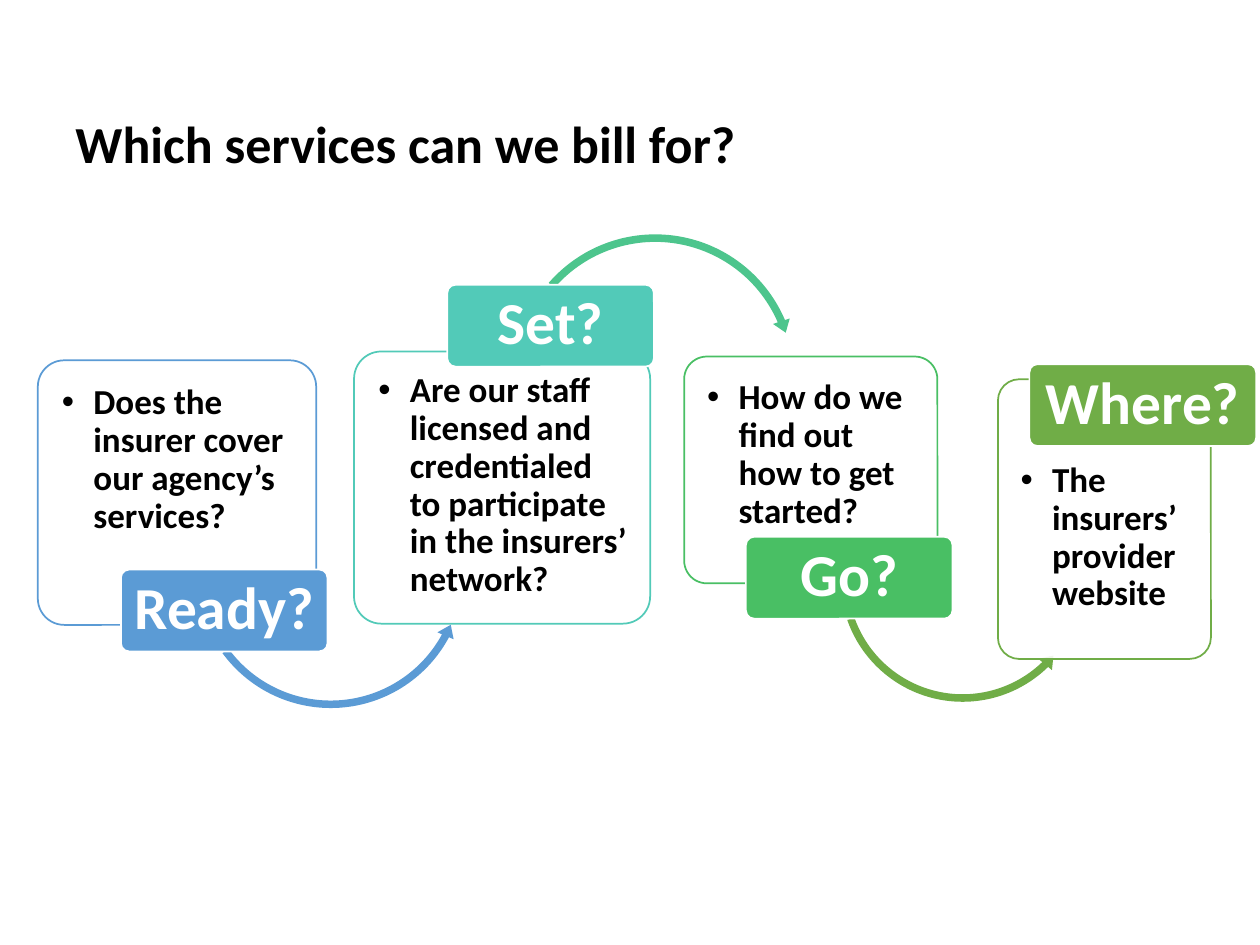
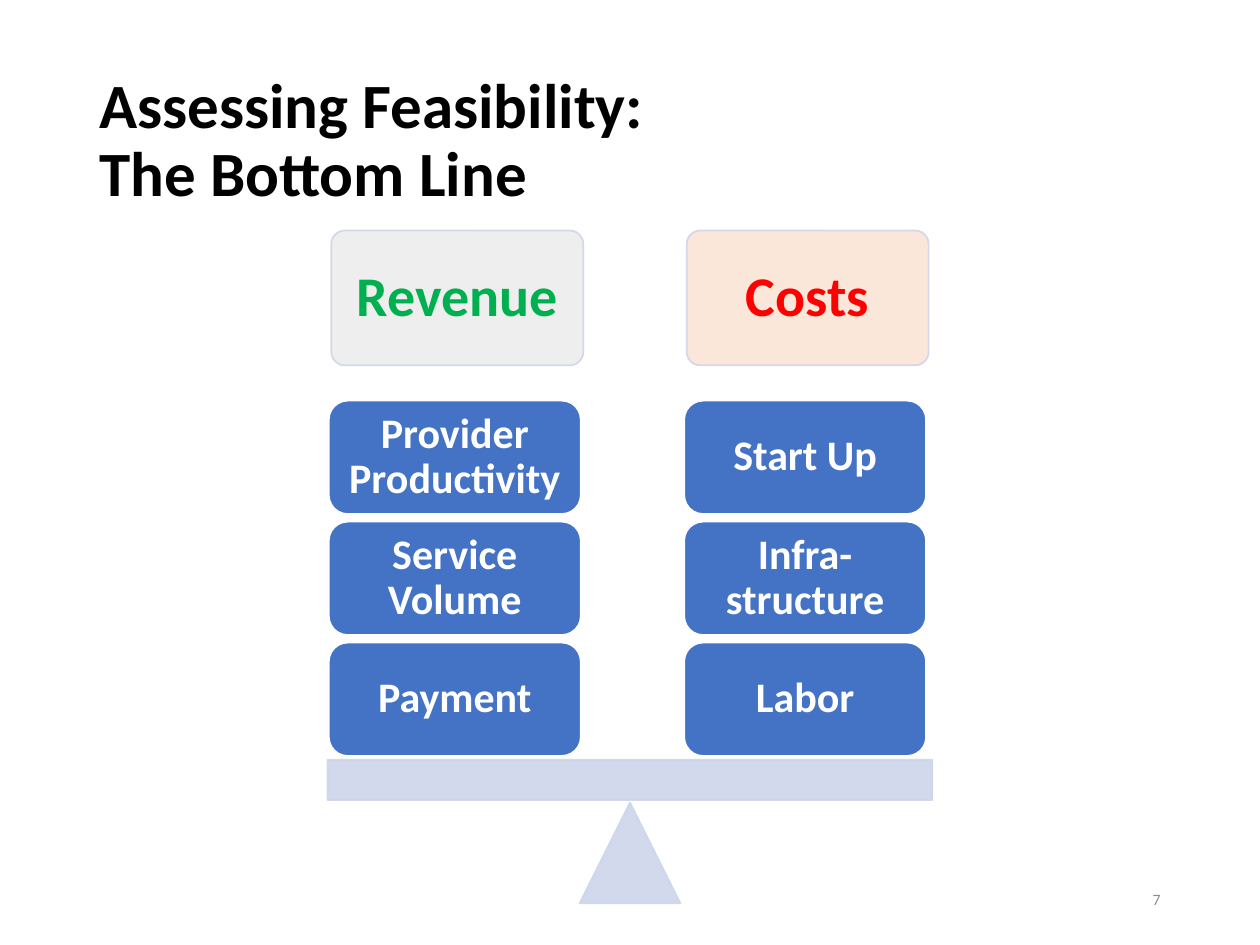
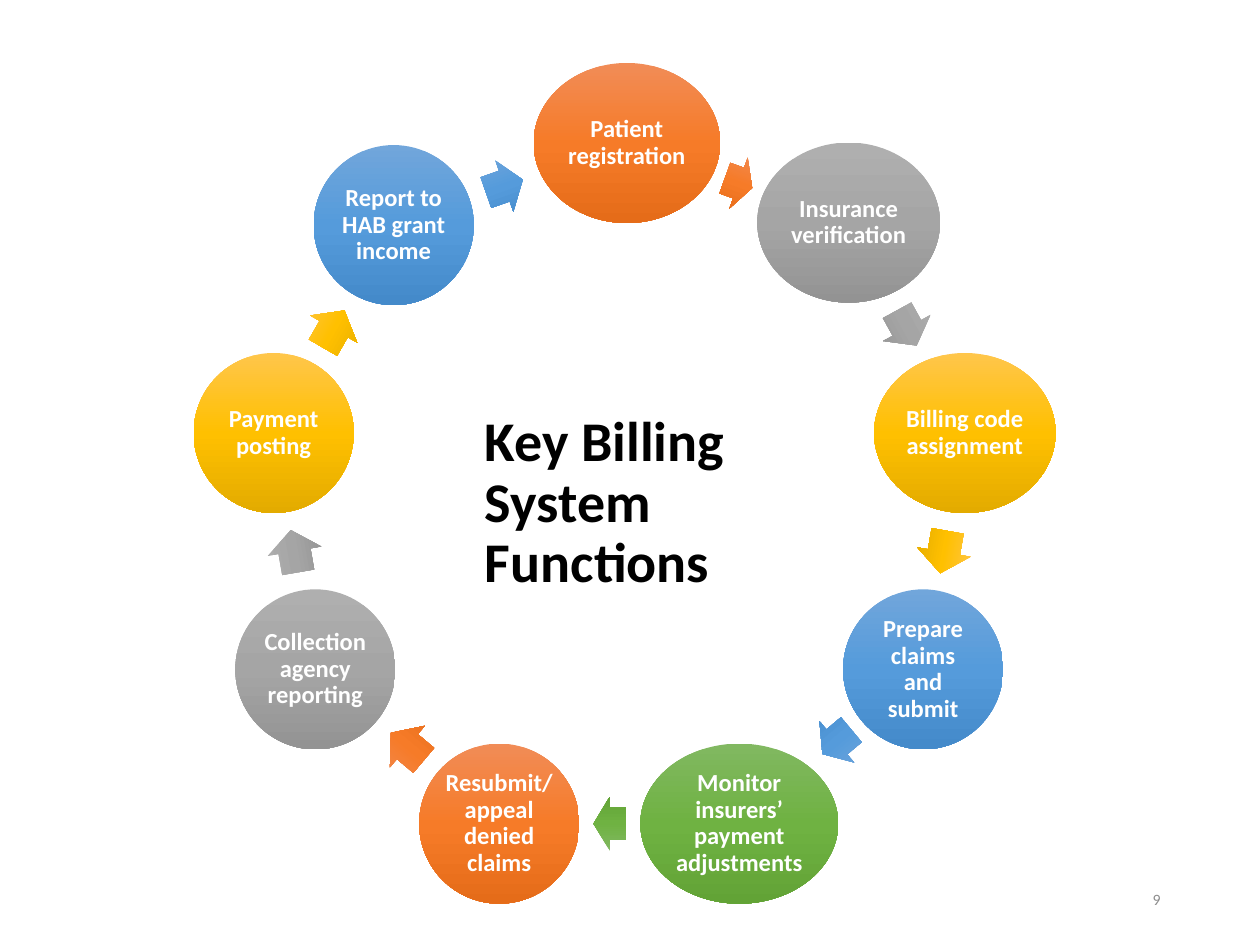
from copy import deepcopy
from math import atan2, cos, degrees, radians, sin

from lxml.etree import SubElement
from pptx import Presentation
from pptx.dml.color import RGBColor
from pptx.enum.shapes import MSO_SHAPE as SHAPE
from pptx.enum.text import MSO_ANCHOR as ANCHOR, PP_ALIGN as ALIGN
from pptx.oxml.ns import qn
from pptx.util import Inches, Pt

FONT = "Calibri"
COLORS = {
    "black": "000000", "white": "FFFFFF", "footer": "8C8C8C",
    "ready": "5B9BD5", "set": "52CAB8", "set_arrow": "4DC58D",
    "go": "49BF64", "where": "70AD47",
    "revenue": "00B050", "costs": "FF0000",
    "revenue_back": "EDEDED", "costs_back": "FBE5D6",
    "scale": "CFD5EA", "weight": "4472C4",
}
STEP_GRADIENTS = [
    ("F18C57", "F67B28", "E56C19"),
    ("AFAFAF", "A5A5A5", "939393"),
    ("FFC64B", "FFC000", "E3AB00"),
    ("71A6DB", "559BDB", "448ACA"),
    ("81B861", "6FB242", "62A336"),
]


def add_box(slide, kind, at, fill, line=None, alpha=None):
    """Add a shape; fill is a COLORS key or three gradient colours, alpha a percentage."""
    box = slide.shapes.add_shape(kind, *map(Inches, at))
    box.shadow.inherit = False
    if isinstance(fill, tuple):
        box.fill.gradient()
        box.fill.gradient_angle = 270
        stop_list = box._element.spPr.find(qn("a:gradFill")).find(qn("a:gsLst"))
        stop_list.insert(1, deepcopy(stop_list[0]))
        for stop, position, color in zip(box.fill.gradient_stops, (0, 0.5, 1), fill):
            stop.position = position
            stop.color.rgb = RGBColor.from_string(color)
    else:
        box.fill.solid()
        box.fill.fore_color.rgb = RGBColor.from_string(COLORS[fill])
    if line:
        box.line.color.rgb = RGBColor.from_string(COLORS[line])
        box.line.width = Pt(1)
    else:
        box.line.fill.background()
    if alpha:
        for color in box._element.spPr.iter(qn("a:srgbClr")):
            SubElement(color, qn("a:alpha"), val=str(alpha * 1000))
    return box


def write(box, text, size, color="white", bold=True, align=ALIGN.CENTER,
          anchor=ANCHOR.MIDDLE, margins=(0.1, 0.05, 0.1, 0.05)):
    """Put one formatted paragraph in a box and return it; margins run left, top, right, bottom."""
    frame = box.text_frame
    frame.word_wrap = True
    frame.vertical_anchor = anchor
    (frame.margin_left, frame.margin_top,
     frame.margin_right, frame.margin_bottom) = map(Inches, margins)
    paragraph = frame.paragraphs[0]
    paragraph.text = text
    paragraph.alignment = align
    paragraph.line_spacing = 0.9
    for run in paragraph.runs:
        run.font.name = FONT
        run.font.size = Pt(size)
        run.font.bold = bold
        run.font.color.rgb = RGBColor.from_string(COLORS[color])
    return paragraph


prs = Presentation()
prs.slide_width, prs.slide_height = Inches(10), Inches(7.5)

# Title, its place and size, and the page number where one shows
slides = []
for title, title_at, size, page in [
    ("Which services can we bill for?", (0.5, 0.83, 8.92, 0.67), 29.7, None),
    ("Assessing Feasibility: \vThe Bottom Line", (0.69, 0.4, 8.62, 1.45), 36, "7"),
    ("Key Billing System Functions", (3.75, 3, 2.5, 2), 32, "9"),
]:
    slide = prs.slides.add_slide(prs.slide_layouts[6])
    heading = slide.shapes.add_textbox(*map(Inches, title_at))
    write(heading, title, size, "black", align=ALIGN.LEFT)
    if page:
        footer = slide.shapes.add_textbox(*map(Inches, (7.06, 6.95, 2.25, 0.4)))
        write(footer, page, 9, "footer", bold=False, align=ALIGN.RIGHT)
    slides.append(slide)
questions_slide, balance_slide, cycle_slide = slides

# Slide 1: question cards, each with a tag and an arrow to the next card
LEFT_ARROW, RIGHT_ARROW = SHAPE.LEFT_CIRCULAR_ARROW, SHAPE.CIRCULAR_ARROW
questions = [
    ("Ready?", "ready", "Does the insurer cover our agency’s services?",
     (0.3, 2.86, 2.21, 2.1), ANCHOR.TOP, 0.13, (0.96, 4.52, 1.64, 0.65),
     (LEFT_ARROW, 1.52, 3.45, 2.21, "ready", 17, 86.28)),
    ("Set?", "set",
     "Are our staff licensed and credentialed to participate in the insurers’ network?",
     (2.81, 2.79, 2.35, 2.16), ANCHOR.BOTTOM, 0.13, (3.55, 2.26, 1.64, 0.65),
     (RIGHT_ARROW, 4.04, 1.82, 2.32, "set_arrow", 202.04, 132.59)),
    ("Go?", "go", "How do we find out how to get started?",
     (5.43, 2.83, 2.01, 1.8), ANCHOR.TOP, 0.13, (5.92, 4.26, 1.64, 0.65),
     (LEFT_ARROW, 6.63, 3.59, 2.02, "where", 27.47, 96.43)),
    ("Where?", "where", "The insurers’ provider website",
     (7.92, 3.01, 1.69, 2.22), ANCHOR.TOP, 0.61, (8.17, 2.89, 1.8, 0.65), None),
]
for label, color, question, card_at, anchor, top, tag_at, arrow in questions:
    card = add_box(questions_slide, SHAPE.ROUNDED_RECTANGLE, card_at, "white", color, 90)
    card.adjustments[0] = 0.1
    # The outline stays opaque
    outline = card._element.spPr.find(qn("a:ln"))
    for alpha in list(outline.iter(qn("a:alpha"))):
        alpha.getparent().remove(alpha)
    bullet = write(card, question, 20, "black", align=ALIGN.LEFT, anchor=anchor,
                   margins=(0.13, top, 0.12, 0.13))
    properties = bullet._p.get_or_add_pPr()
    properties.set("marL", str(Inches(0.25)))
    properties.set("indent", str(-Inches(0.25)))
    SubElement(properties, qn("a:buFont"), typeface="Arial")
    SubElement(properties, qn("a:buChar"), char="•")

    if arrow:
        kind, left, y, size, arrow_color, end, start = arrow
        curve = add_box(questions_slide, kind, (left, y, size, size), arrow_color)
        for i, value in enumerate((0.06 / size, 7.1 / size, end, start, 0.07 / size)):
            curve.adjustments[i] = value

    tag = add_box(questions_slide, SHAPE.ROUNDED_RECTANGLE, tag_at, color, "white")
    tag.adjustments[0] = 0.1
    write(tag, label, 34, margins=(0.07, 0.05, 0.07, 0.05))

# Slide 2: two stacks of weights on a balance
for kind, at in [(SHAPE.ISOSCELES_TRIANGLE, (4.6, 6.37, 0.8, 0.8)),
                 (SHAPE.RECTANGLE, (2.6, 6.03, 4.8, 0.32))]:
    add_box(balance_slide, kind, at, "scale", "scale", 90)

for side, color, back, left, width, weights in [
    ("Revenue", "revenue", "revenue_back", 2.61, 2,
     ["Provider Productivity", "Service Volume", "Payment"]),
    ("Costs", "costs", "costs_back", 5.43, 1.92, ["Start Up", "Infra-structure", "Labor"]),
]:
    header = add_box(balance_slide, SHAPE.ROUNDED_RECTANGLE,
                     (left + 0.02, 1.83, width, 1.07), back, "scale", 90)
    header.adjustments[0] = 0.1
    write(header, side, 32, color, margins=(0.13,) * 4)
    for row, weight in enumerate(weights):
        block = add_box(balance_slide, SHAPE.ROUNDED_RECTANGLE,
                        (left, 3.18 + 0.96 * row, width, 0.9), "weight", "white")
        write(block, weight, 24, margins=(0.1,) * 4)

# Slide 3: ring of steps; each has its text, width, offset from the ring and arrow length
CENTER_X, CENTER_Y, RADIUS = 4.915, 3.92, 2.785
STEP_HEIGHT, ARROW_HEIGHT = 1.27, 0.43
steps = [
    ("Patient registration", 1.48, 0.06, 0, 0.23),
    ("Insurance verification", 1.45, 0.03, -0.02, 0.32),
    ("Billing code assignment", 1.44, 0, 0, 0.34),
    ("Prepare claims and submit", 1.27, 0, 0, 0.3),
    ("Monitor insurers’ payment adjustments", 1.57, 0, 0, 0.26),
    ("Resubmit/ appeal denied claims", 1.27, 0, 0, 0.34),
    ("Collection agency reporting", 1.27, 0, 0, 0.34),
    ("Payment posting", 1.27, 0, 0, 0.34),
    ("Report to HAB grant income", 1.27, 0, 0, 0.31),
]
centers = []
for i, (_, _, dx, dy, _) in enumerate(steps):
    angle = radians(360 / len(steps) * i)
    centers.append((CENTER_X + RADIUS * sin(angle) + dx, CENTER_Y - RADIUS * cos(angle) + dy))

for i, (step, width, _, _, length) in enumerate(steps):
    following = (i + 1) % len(steps)
    gradient = STEP_GRADIENTS[i % len(STEP_GRADIENTS)]
    (x, y), (next_x, next_y) = centers[i], centers[following]
    bubble = add_box(cycle_slide, SHAPE.OVAL,
                     (x - width / 2, y - STEP_HEIGHT / 2, width, STEP_HEIGHT), gradient)
    write(bubble, step, 14, margins=(0.02,) * 4)

    # Centre the arrow in the gap, away from the wider neighbour
    heading = atan2(next_y - y, next_x - x)
    shift = (width - steps[following][1]) / 4 * abs(cos(heading))
    arrow_x = (x + next_x) / 2 + shift * cos(heading)
    arrow_y = (y + next_y) / 2 + shift * sin(heading)
    arrow = add_box(cycle_slide, SHAPE.RIGHT_ARROW,
                    (arrow_x - length / 2, arrow_y - ARROW_HEIGHT / 2, length, ARROW_HEIGHT),
                    gradient)
    arrow.adjustments[0] = 0.6
    arrow.adjustments[1] = 0.5
    arrow.rotation = degrees(heading) % 360

prs.save("out.pptx")
